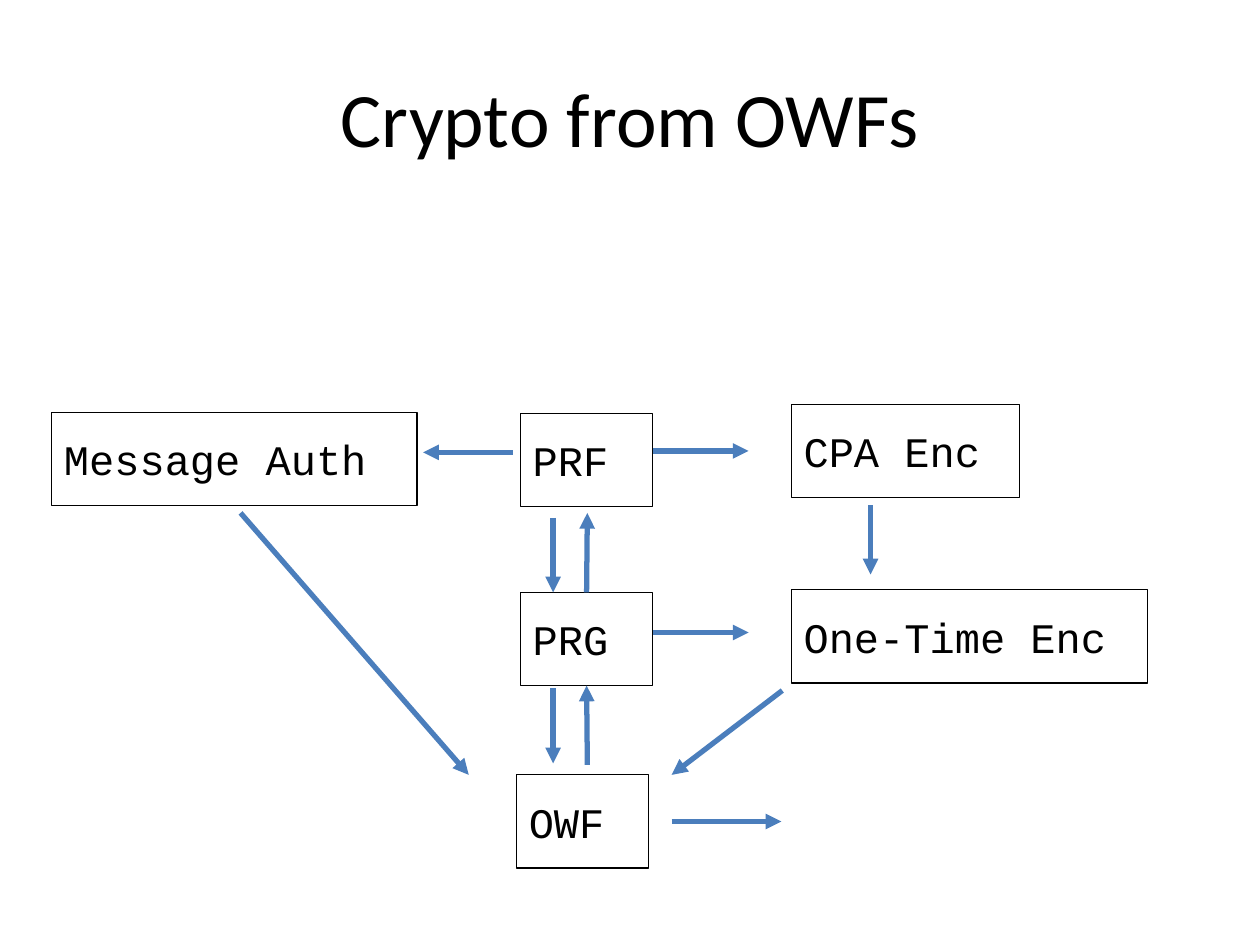
"""Build a slide showing how cryptographic primitives follow from one-way functions."""
from dataclasses import dataclass
from typing import Optional

from lxml.etree import SubElement
from pptx import Presentation
from pptx.dml.color import RGBColor
from pptx.enum.shapes import MSO_CONNECTOR as Conn, MSO_SHAPE as Shape
from pptx.enum.text import MSO_ANCHOR as Anchor, PP_ALIGN as Align
from pptx.oxml.ns import qn
from pptx.util import Cm, Pt


@dataclass(frozen=True)
class Theme:
    ink: RGBColor = RGBColor(0x00, 0x00, 0x00)
    arrow: RGBColor = RGBColor(0x4B, 0x7E, 0xBC)
    title_font: str = "Calibri"
    box_font: str = "Courier New"
    title_size: Pt = Pt(44)
    box_size: Pt = Pt(24)
    box_line: Pt = Pt(0.75)
    arrow_line: Pt = Pt(3)


@dataclass(frozen=True)
class Box:
    label: str
    left: float
    top: float
    width: float = 2.67
    height: float = 1.88


@dataclass(frozen=True)
class Joint:
    label: str
    site: int


@dataclass(frozen=True)
class Arrow:
    x1: float
    y1: float
    x2: float
    y2: float
    begin: Optional[Joint] = None
    end: Optional[Joint] = None


THEME = Theme()
TOP, BOTTOM = 0, 2
CORE_X, ENC_X = 10.49, 15.95
DOWN_X, UP_X = 11.15, 11.84
OUT_X1, OUT_X2 = 13.16, 15.09

BOXES = [
    Box("PRF", CORE_X, 8.33),
    Box("PRG", CORE_X, 11.94),
    Box("OWF", 10.41, 15.62),
    Box("Message Auth", 1.04, 8.31, width=7.37),
    Box("CPA Enc", ENC_X, 8.15, width=4.6),
    Box("One-Time Enc", ENC_X, 11.89, width=7.19),
]

ARROWS = [
    Arrow(UP_X, 11.94, UP_X, 10.34, begin=Joint("PRG", TOP)),
    Arrow(UP_X, 15.42, UP_X, 13.82, end=Joint("PRG", BOTTOM)),
    Arrow(DOWN_X, 10.44, DOWN_X, 11.94),
    Arrow(DOWN_X, 13.87, DOWN_X, 15.39),
    Arrow(OUT_X1, 9.09, OUT_X2, 9.09),
    Arrow(OUT_X1, 12.75, OUT_X2, 12.75),
    Arrow(10.34, 9.12, 8.53, 9.12),
    Arrow(17.55, 10.19, 17.55, 11.58),
    Arrow(13.54, 16.56, 15.75, 16.56),
    Arrow(4.85, 10.34, 9.45, 15.62),
    Arrow(15.77, 13.92, 13.54, 15.62),
]


def write(sp, text: str, font: str, size: Pt, align: Align) -> None:
    """Put one run of text, vertically centred, in a shape."""
    tf = sp.text_frame
    tf.word_wrap = True
    tf.vertical_anchor = Anchor.MIDDLE
    p = tf.paragraphs[0]
    p.alignment = align
    r = p.add_run()
    r.text = text
    r.font.name = font
    r.font.size = size
    r.font.color.rgb = THEME.ink


def draw_title(s, text: str) -> None:
    """Draw the slide title."""
    sp = s.shapes.add_textbox(Cm(1.27), Cm(0.76), Cm(22.86), Cm(3.18))
    write(sp, text, THEME.title_font, THEME.title_size, Align.CENTER)


def draw_box(s, box: Box):
    """Draw an outlined primitive and return its shape."""
    sp = s.shapes.add_shape(
        Shape.RECTANGLE, Cm(box.left), Cm(box.top), Cm(box.width), Cm(box.height)
    )
    sp.shadow.inherit = False
    sp.fill.background()
    sp.line.color.rgb = THEME.ink
    sp.line.width = THEME.box_line
    write(sp, box.label, THEME.box_font, THEME.box_size, Align.LEFT)
    return sp


def draw_arrow(s, arrow: Arrow, shapes: dict) -> None:
    """Draw an implication arrow, joined to a box where it has a joint."""
    cx = s.shapes.add_connector(
        Conn.STRAIGHT, Cm(arrow.x1), Cm(arrow.y1), Cm(arrow.x2), Cm(arrow.y2)
    )
    if arrow.begin:
        cx.begin_connect(shapes[arrow.begin.label], arrow.begin.site)
    if arrow.end:
        cx.end_connect(shapes[arrow.end.label], arrow.end.site)
    cx.line.color.rgb = THEME.arrow
    cx.line.width = THEME.arrow_line
    SubElement(cx.line._get_or_add_ln(), qn("a:tailEnd"), type="triangle")
    SubElement(cx._element.spPr, qn("a:effectLst"))


def main() -> None:
    """Assemble and save the presentation."""
    prs = Presentation()
    prs.slide_width, prs.slide_height = Cm(25.4), Cm(19.05)
    s = prs.slides.add_slide(prs.slide_layouts[6])
    draw_title(s, "Crypto from OWFs")
    shapes = {box.label: draw_box(s, box) for box in BOXES}
    for arrow in ARROWS:
        draw_arrow(s, arrow, shapes)
    prs.save("out.pptx")


if __name__ == "__main__":
    main()
